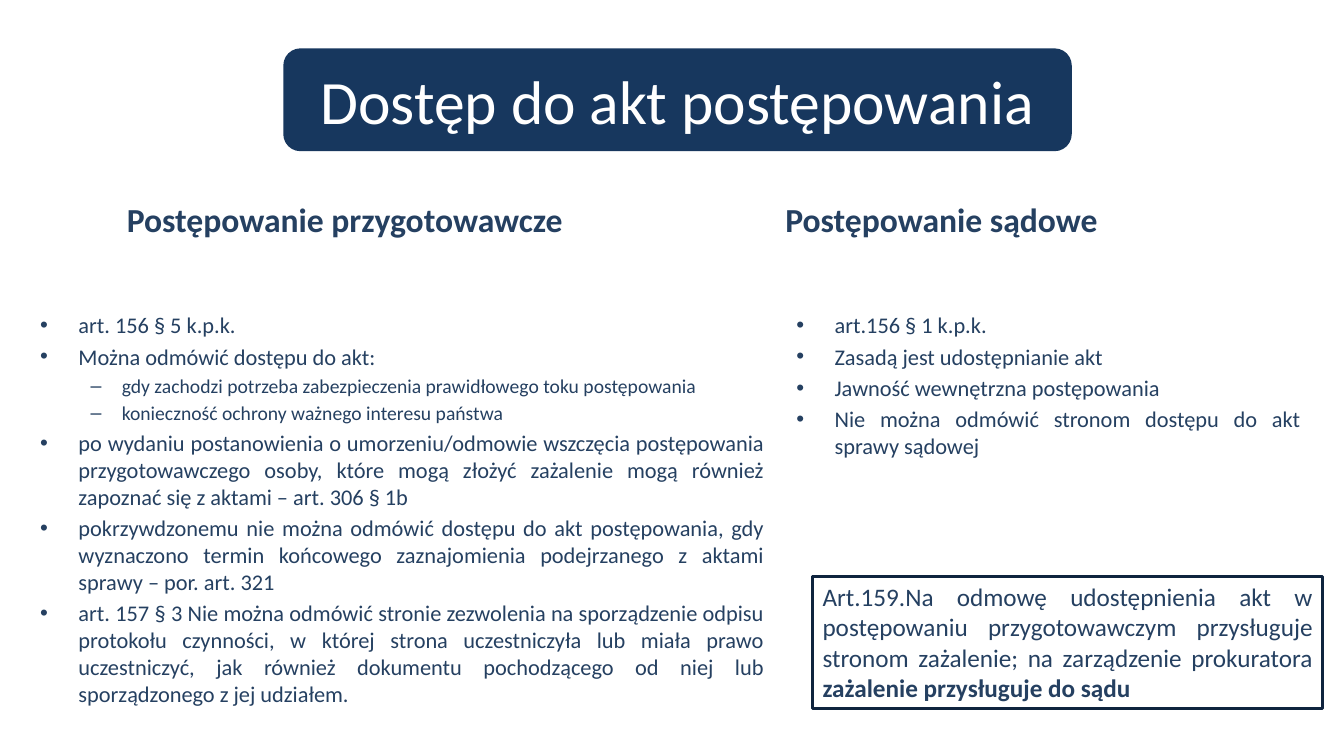
"""Build the slide on access to case files in criminal proceedings."""
from pptx import Presentation
from pptx.dml.color import RGBColor
from pptx.enum.shapes import MSO_SHAPE
from pptx.enum.text import MSO_ANCHOR, PP_ALIGN
from pptx.oxml.ns import qn
from pptx.util import Inches, Pt
from lxml.etree import SubElement

FONT, INK, NAVY, EDGE, WHITE = "Calibri", "254061", "17375E", "0F243E", "FFFFFF"
TITLE = "Dostęp do akt postępowania"
HEADING_TOP, HEADING_HEIGHT, LIST_TOP = 1.52, 0.9, 3.04
COLUMNS = [
    {
        "heading": "Postępowanie przygotowawcze", "heading_left": 1.16,
        "list_left": 0.3, "list_size": (7.38, 4.3),
        "points": [
            (0, "art. 156 § 5 k.p.k."),
            (0, "Można odmówić dostępu do akt:"),
            (1, "gdy zachodzi potrzeba zabezpieczenia prawidłowego toku postępowania"),
            (1, "konieczność ochrony ważnego interesu państwa"),
            (0, "po wydaniu postanowienia o umorzeniu/odmowie wszczęcia postępowania "
                "przygotowawczego osoby, które mogą złożyć zażalenie mogą również "
                "zapoznać się z aktami – art. 306 § 1b"),
            (0, "pokrzywdzonemu nie można odmówić dostępu do akt postępowania, gdy "
                "wyznaczono termin końcowego zaznajomienia podejrzanego z aktami "
                "sprawy – por. art. 321"),
            (0, "art. 157 § 3 Nie można odmówić stronie zezwolenia na sporządzenie odpisu "
                "protokołu czynności, w której strona uczestniczyła lub miała prawo "
                "uczestniczyć, jak również dokumentu pochodzącego od niej lub "
                "sporządzonego z jej udziałem."),
        ],
    },
    {
        "heading": "Postępowanie sądowe", "heading_left": 7.69,
        "list_left": 7.8, "list_size": (5.2, 3.65),
        "points": [
            (0, "art.156 § 1 k.p.k."),
            (0, "Zasadą jest udostępnianie akt"),
            (0, "Jawność wewnętrzna postępowania"),
            (0, "Nie można odmówić stronom dostępu do akt sprawy sądowej"),
        ],
    },
]
APPEAL = [
    ("Art.159.Na odmowę udostępnienia akt w postępowaniu przygotowawczym "
     "przysługuje stronom zażalenie; na zarządzenie prokuratora ", False),
    ("zażalenie przysługuje do sądu", True),
]
LEVELS = [("•", 16, 0.38, -0.38), ("–", 14, 0.81, -0.31)]


def color(value):
    return RGBColor.from_string(value)


def style(paragraph, size, ink=INK, align=PP_ALIGN.LEFT, bold=None):
    paragraph.alignment = align
    font = paragraph.font
    font.name, font.size, font.bold = FONT, Pt(size), bold
    font.color.rgb = color(ink)


def add_text(slide, *place):
    frame = slide.shapes.add_textbox(*map(Inches, place)).text_frame
    frame.word_wrap = True
    return frame


def add_panel(slide, kind, fill, *place):
    panel = slide.shapes.add_shape(kind, *map(Inches, place))
    panel.shadow.inherit = False
    panel.fill.solid()
    panel.fill.fore_color.rgb = color(fill)
    panel.line.fill.background()
    return panel


def add_points(frame, points):
    for index, (level, text) in enumerate(points):
        paragraph = frame.paragraphs[0] if index == 0 else frame.add_paragraph()
        mark, size, margin, indent = LEVELS[level]
        paragraph.text, paragraph.level = text, level
        if index:
            paragraph.space_before = Pt(size * 0.2)
        properties = paragraph._p.get_or_add_pPr()
        properties.set("marL", str(Inches(margin)))
        properties.set("indent", str(Inches(indent)))
        SubElement(properties, qn("a:buFont")).set("typeface", "Arial")
        SubElement(properties, qn("a:buChar")).set("char", mark)
        style(paragraph, size, align=PP_ALIGN.JUSTIFY)


def main():
    deck = Presentation()
    deck.slide_width, deck.slide_height = Inches(13.33), Inches(7.5)
    slide = deck.slides.add_slide(deck.slide_layouts[6])

    for column in COLUMNS:
        heading = add_text(slide, column["heading_left"], HEADING_TOP, 5.2, HEADING_HEIGHT)
        heading.vertical_anchor = MSO_ANCHOR.BOTTOM
        heading.text = column["heading"]
        style(heading.paragraphs[0], 24, bold=True)
        points = add_text(slide, column["list_left"], LIST_TOP, *column["list_size"])
        add_points(points, column["points"])

    appeal = add_panel(slide, MSO_SHAPE.RECTANGLE, WHITE, 8.06, 5.72, 5.06, 1.31)
    appeal.line.color.rgb = color(EDGE)
    appeal.line.width = Pt(2)
    appeal.text_frame.vertical_anchor = MSO_ANCHOR.TOP
    clause = appeal.text_frame.paragraphs[0]
    for text, bold in APPEAL:
        run = clause.add_run()
        run.text, run.font.bold = text, bold
    style(clause, 18, align=PP_ALIGN.JUSTIFY)

    banner = add_panel(slide, MSO_SHAPE.ROUNDED_RECTANGLE, NAVY, 2.81, 0.48, 7.82, 1.02)
    banner.text_frame.text = TITLE
    banner.text_frame.vertical_anchor = MSO_ANCHOR.MIDDLE
    style(banner.text_frame.paragraphs[0], 44, WHITE, PP_ALIGN.CENTER)

    deck.save("out.pptx")


if __name__ == "__main__":
    main()
